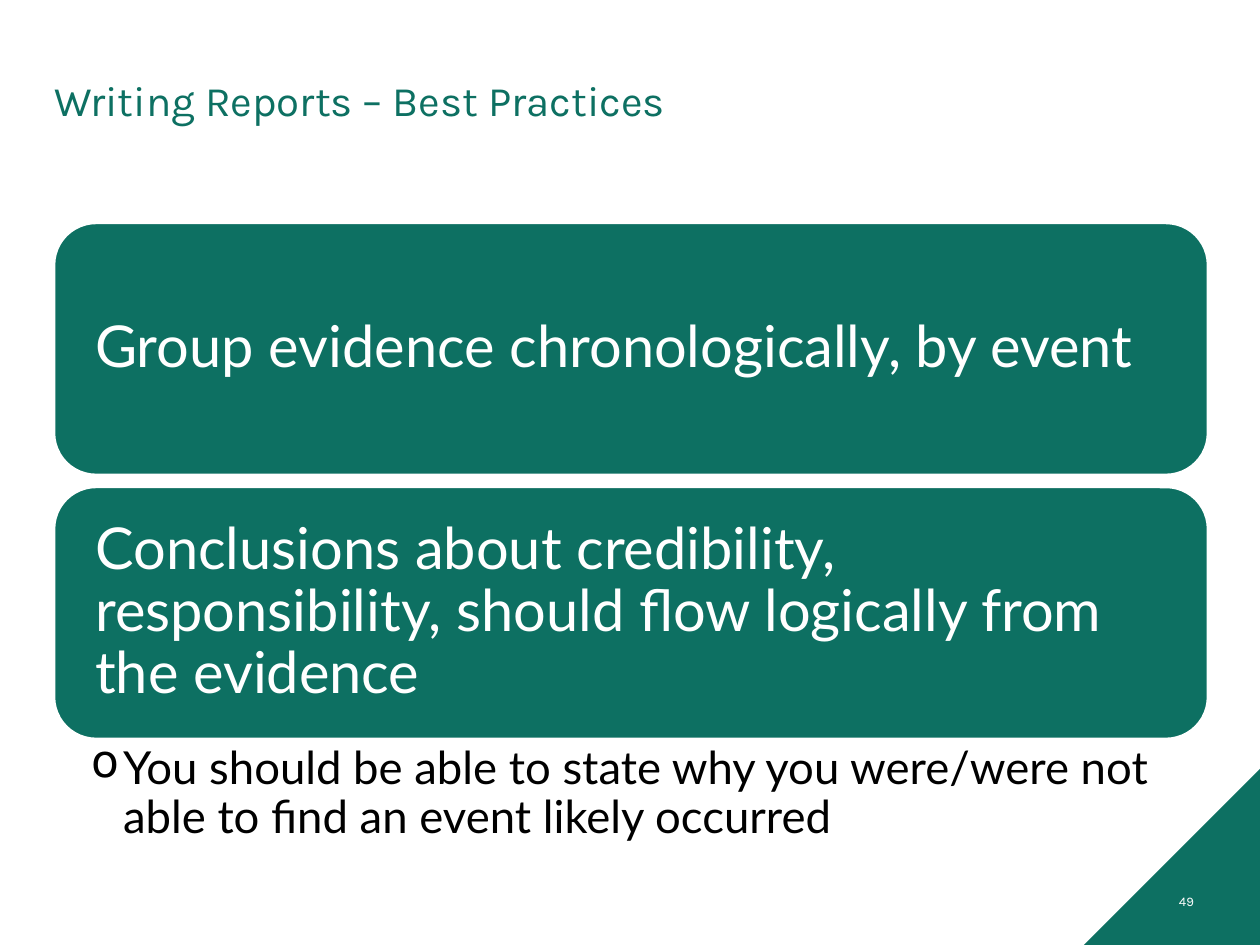
import pptx
import pptx.util
from lxml import etree
from pptx.dml.color import RGBColor
from pptx.enum.shapes import MSO_SHAPE
from pptx.enum.text import MSO_ANCHOR, PP_ALIGN
from pptx.oxml.ns import qn

PX = 914400 / 126
GREEN = RGBColor(0x0D, 0x70, 0x62)
WHITE = RGBColor(0xFF, 0xFF, 0xFF)
BLACK = RGBColor(0x00, 0x00, 0x00)

LEFT, WIDTH = 54, 1154
CARD_TOP, CARD_HEIGHT, CARD_PITCH = 223, 252, 264
CARD_TEXTS = [
    "Group evidence chronologically, by event",
    "Conclusions about credibility, responsibility, should flow logically from the evidence",
]
REASON = "You should be able to state why you were/were not able to find an event likely occurred"


def px(*lengths):
    return [pptx.util.Emu(round(length * PX)) for length in lengths]


def apply(target, values):
    for name, value in values.items():
        setattr(target, name, value)


def add_shape(page, kind, place, fill):
    shape = page.shapes.add_shape(kind, *px(*place))
    shape.shadow.inherit = False
    shape.fill.solid()
    shape.fill.fore_color.rgb = fill
    shape.line.fill.background()
    return shape


def write(box, text, face, size, color, insets, anchor=MSO_ANCHOR.MIDDLE, **layout):
    """Put one paragraph in a box; insets are left, top, right, bottom in px."""
    sides = ("margin_left", "margin_top", "margin_right", "margin_bottom")
    frame = box.text_frame
    apply(frame, {"word_wrap": True, "vertical_anchor": anchor, **dict(zip(sides, px(*insets)))})
    para = frame.paragraphs[0]
    apply(para, {"alignment": PP_ALIGN.LEFT, **layout})
    span = para.add_run()
    span.text = text
    apply(span.font, {"name": face, "size": pptx.util.Pt(size)})
    span.font.color.rgb = color
    return para


def add_text(page, place, *content, **layout):
    return write(page.shapes.add_textbox(*px(*place)), *content, **layout)


def add_card(page, top, text):
    card = add_shape(page, MSO_SHAPE.ROUNDED_RECTANGLE, (LEFT, top, WIDTH, CARD_HEIGHT), GREEN)
    card.line.color.rgb = WHITE
    card.line.width = pptx.util.Pt(1.5)
    write(card, text, "Lato", 33, WHITE, (29, 29, 29, 29), line_spacing=0.9)


def add_bullet(para, mark, indent):
    properties = para._p.get_or_add_pPr()
    (hang,) = px(indent)
    properties.set("marL", str(hang))
    properties.set("indent", str(-hang))
    etree.SubElement(properties, qn("a:buChar")).set("char", mark)


def add_corner(page):
    corner = add_shape(page, MSO_SHAPE.RIGHT_TRIANGLE, (1084, 769, 176, 176), GREEN)
    corner.element.spPr.xfrm.set("flipH", "1")


def main():
    deck = pptx.Presentation()
    deck.slide_width, deck.slide_height = px(1260, 945)
    page = deck.slides.add_slide(deck.slide_layouts[6])

    add_corner(page)
    add_text(page, (LEFT, 50, WIDTH, 105), "Writing Reports – Best Practices",
             "Karla", 24, GREEN, (0, 6, 13, 6), line_spacing=0.9)
    for row, text in enumerate(CARD_TEXTS):
        add_card(page, CARD_TOP + row * CARD_PITCH, text)
    reason = add_text(page, (LEFT, 739, WIDTH, 113), REASON, "Lato", 26, BLACK,
                      (37, 6, 33, 6), anchor=MSO_ANCHOR.TOP, line_spacing=0.9)
    add_bullet(reason, "o", 32)
    add_text(page, (924, 876, 283, 50), "49", "Karla", 7.5, WHITE,
             (13, 6, 13, 6), alignment=PP_ALIGN.RIGHT)

    deck.save("out.pptx")


if __name__ == "__main__":
    main()
